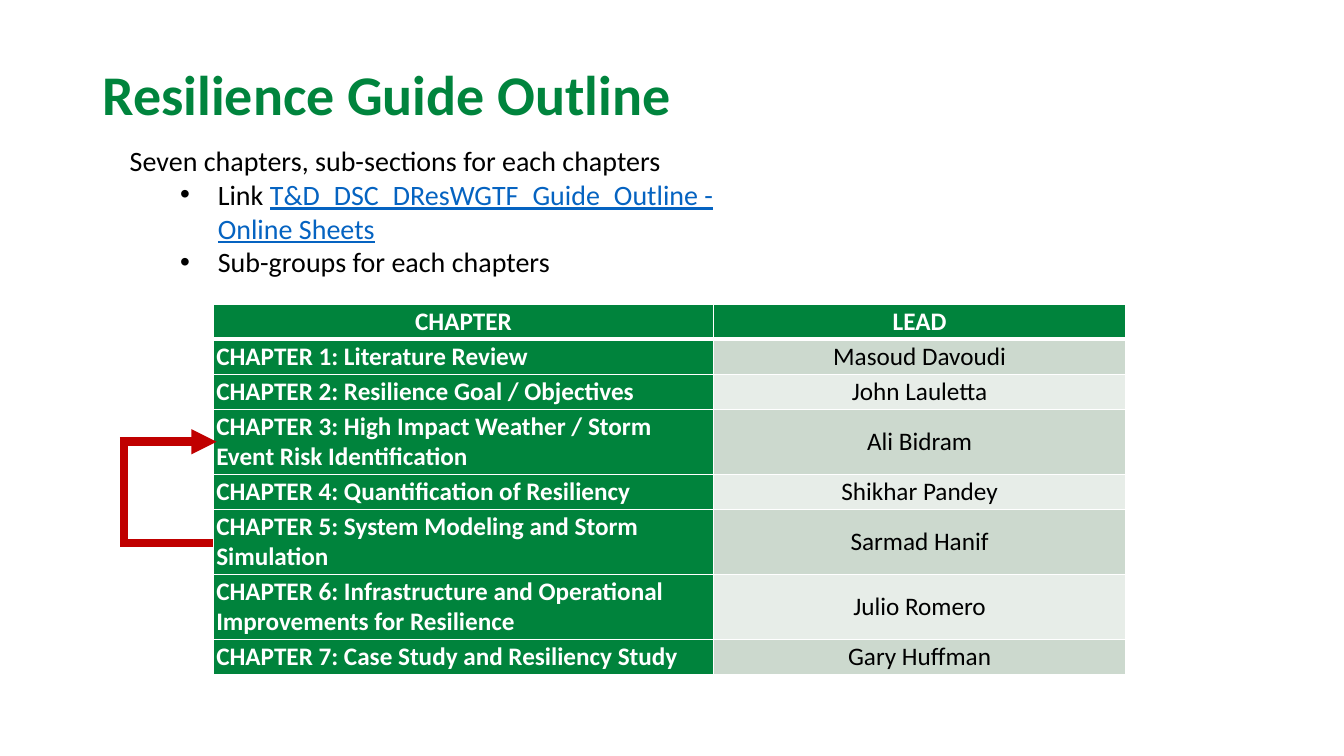
from lxml import etree
from pptx import Presentation
from pptx.dml.color import RGBColor
from pptx.enum.shapes import MSO_CONNECTOR
from pptx.enum.text import MSO_ANCHOR, PP_ALIGN
from pptx.oxml.ns import qn
from pptx.util import Cm, Pt

STRAIGHT = MSO_CONNECTOR.STRAIGHT
MIDDLE = MSO_ANCHOR.MIDDLE
LEFT, CENTER = PP_ALIGN.LEFT, PP_ALIGN.CENTER

FONT = "Calibri"
COLORS = {
    "title": "00843D", "green": "00833C", "band_dark": "CCD9CE",
    "band_light": "E7EDE8", "white": "FFFFFF", "black": "000000",
    "link": "0563C1", "red": "C00000",
}
CHAPTERS = [
    ("CHAPTER 1: Literature Review", "Masoud Davoudi"),
    ("CHAPTER 2: Resilience Goal / Objectives", "John Lauletta"),
    ("CHAPTER 3: High Impact Weather / Storm Event Risk Identification", "Ali Bidram"),
    ("CHAPTER 4: Quantification of Resiliency", "Shikhar Pandey"),
    ("CHAPTER 5: System Modeling and Storm Simulation", "Sarmad Hanif"),
    ("CHAPTER 6: Infrastructure and Operational Improvements for Resilience",
     "Julio Romero"),
    ("CHAPTER 7: Case Study and Resiliency Study", "Gary Huffman"),
]
TWO_LINE_ROWS = (3, 5, 6)


def rgb(name):
    return RGBColor.from_string(COLORS[name])


def style_run(r, size, color, bold=False, underline=False):
    r.font.name = FONT
    r.font.size = Pt(size)
    r.font.color.rgb = rgb(color)
    r.font.bold = bold
    r.font.underline = underline


def add_text_frame(slide, x, y, w, h):
    tf = slide.shapes.add_textbox(Cm(x), Cm(y), Cm(w), Cm(h)).text_frame
    tf.word_wrap = True
    return tf


def add_bullet(p):
    pPr = p._p.get_or_add_pPr()
    pPr.set("marL", str(Cm(2.22)))
    pPr.set("indent", str(Cm(-0.95)))
    etree.SubElement(pPr, qn("a:buFont")).set("typeface", "Arial")
    etree.SubElement(pPr, qn("a:buChar")).set("char", "•")


def set_borders(cell, widths):
    tcPr = cell._tc.get_or_add_tcPr()
    for i, (side, width) in enumerate(widths.items()):
        ln = etree.Element(qn(f"a:ln{side}"), w=str(Pt(width)))
        fill = etree.SubElement(ln, qn("a:solidFill"))
        etree.SubElement(fill, qn("a:srgbClr")).set("val", COLORS["white"])
        tcPr.insert(i, ln)


def add_title(slide, x, y, w, h):
    tf = add_text_frame(slide, x, y, w, h)
    tf.text = "Resilience Guide Outline"
    style_run(tf.paragraphs[0].runs[0], 40, "title", bold=True)


def add_intro(slide, x, y, w, h):
    tf = add_text_frame(slide, x, y, w, h)
    tf.text = "Seven chapters, sub-sections for each chapters"
    style_run(tf.paragraphs[0].runs[0], 20, "black")
    bullets = [
        [("Link ", "black"),
         ("T&D_DSC_DResWGTF_Guide_Outline - Online Sheets", "link")],
        [("Sub-groups for each chapters", "black")],
    ]
    for parts in bullets:
        p = tf.add_paragraph()
        p.level = 1
        add_bullet(p)
        for text, color in parts:
            r = p.add_run()
            r.text = text
            style_run(r, 20, color, underline=color == "link")


def fill_cell(cell, text, row, col):
    header = row == 0
    strong = header or col == 0
    set_borders(cell, {"L": 1, "R": 1, "T": 3 if row == 1 else 1,
                       "B": 3 if header else 1})
    band = "band_dark" if row % 2 else "band_light"
    cell.fill.solid()
    cell.fill.fore_color.rgb = rgb("green" if strong else band)
    cell.vertical_anchor = MIDDLE
    cell.margin_left = cell.margin_right = Cm(0.08)
    cell.margin_top = cell.margin_bottom = Cm(0.05)
    cell.text = text
    p = cell.text_frame.paragraphs[0]
    p.alignment = CENTER if header or col else LEFT
    style_run(p.runs[0], 18, "white" if strong else "black", bold=strong)


def add_chapter_table(slide, x, y, w, h):
    rows = [("CHAPTER", "LEAD")] + CHAPTERS
    table = slide.shapes.add_table(
        len(rows), 2, Cm(x), Cm(y), Cm(w), Cm(h)).table
    table.first_row = table.horz_banding = False
    table.columns[0].width = Cm(12.62)
    table.columns[1].width = Cm(w - 12.62)
    for i, texts in enumerate(rows):
        table.rows[i].height = Cm(1.64 if i in TWO_LINE_ROWS else 0.88)
        for j, text in enumerate(texts):
            fill_cell(table.cell(i, j), text, i, j)


def add_line(slide, x1, y1, x2, y2, arrow=False):
    sp = slide.shapes.add_connector(STRAIGHT, Cm(x1), Cm(y1), Cm(x2), Cm(y2))
    sp.line.color.rgb = rgb("red")
    sp.line.width = Pt(6)
    if arrow:
        etree.SubElement(sp.line._get_or_add_ln(), qn("a:tailEnd"), type="triangle")
    etree.SubElement(sp._element.spPr, qn("a:effectLst"))


def add_feedback_arrow(slide, x, y, w, h):
    """Loop from chapter 5 back to chapter 3."""
    half = 0.1  # half the line width, closes the corners
    add_line(slide, x + w, y + h, x, y + h)
    add_line(slide, x + half, y + h, x + half, y)
    add_line(slide, x, y, x + w + half, y, arrow=True)


def build_outline_slide(prs):
    slide = prs.slides.add_slide(prs.slide_layouts[6])
    add_title(slide, 2.34, 1.37, 20.96, 1.85)
    add_intro(slide, 3.02, 3.5, 16.94, 3.68)
    add_chapter_table(slide, 5.37, 7.67, 22.99, 9.32)
    add_feedback_arrow(slide, 3.02, 11.13, 2.34, 2.56)


def main():
    prs = Presentation()
    prs.slide_width, prs.slide_height = Cm(33.87), Cm(19.05)
    build_outline_slide(prs)
    prs.save("out.pptx")


if __name__ == "__main__":
    main()
